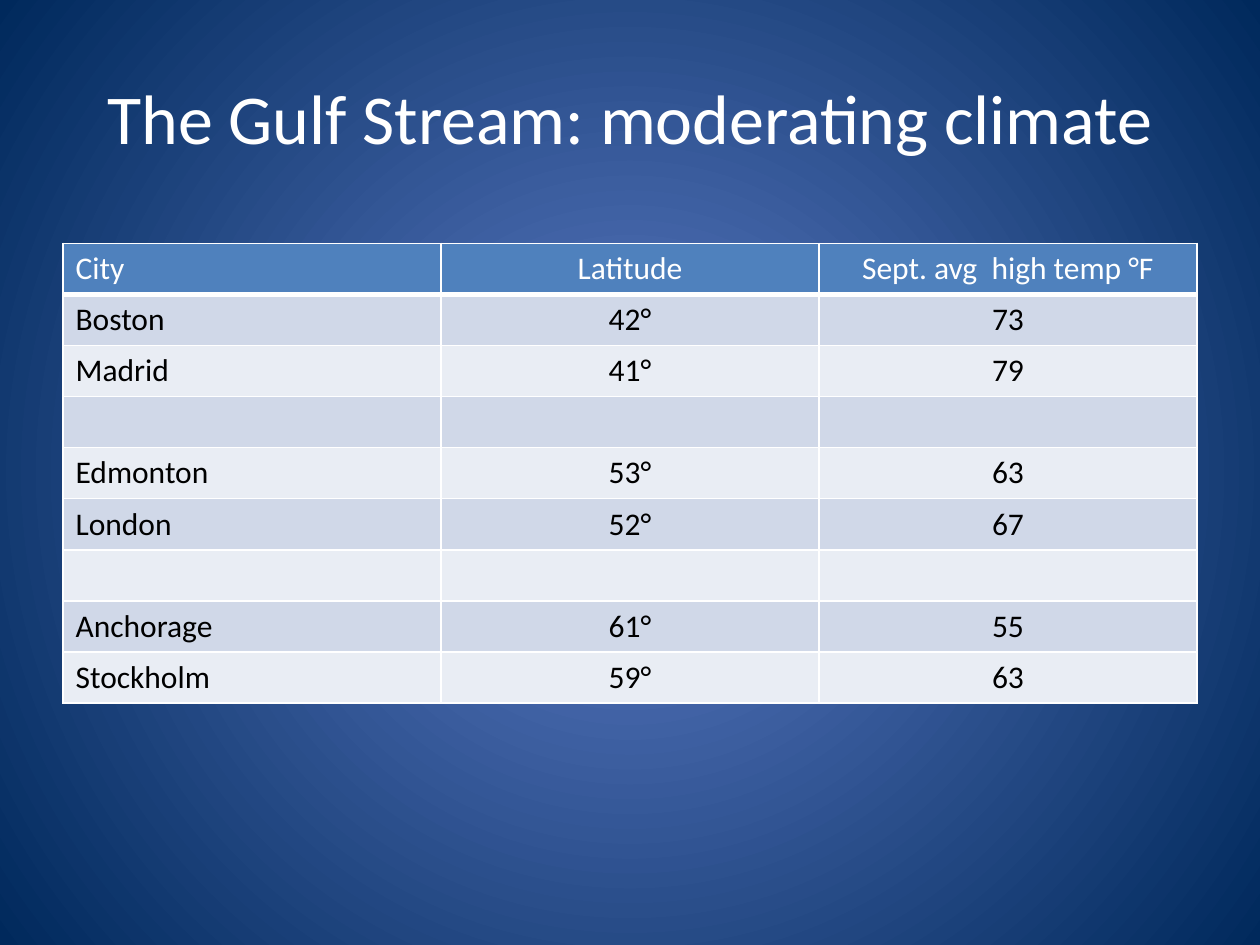
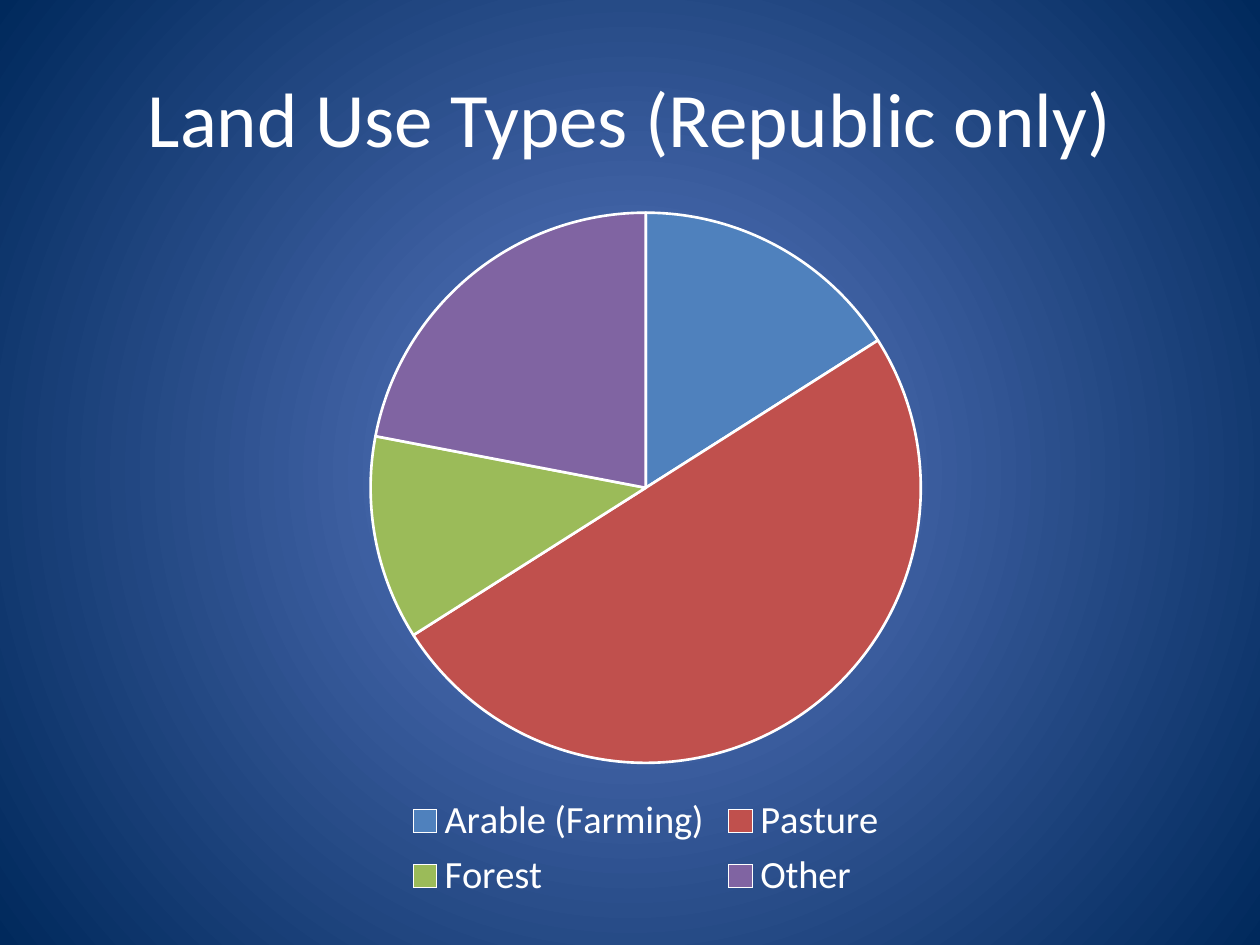
from dataclasses import dataclass

from lxml import etree
from pptx import Presentation
from pptx.chart.data import CategoryChartData
from pptx.dml.color import RGBColor
from pptx.enum.chart import XL_CHART_TYPE, XL_LEGEND_POSITION
from pptx.enum.text import MSO_ANCHOR, PP_ALIGN
from pptx.oxml import parse_xml
from pptx.oxml.ns import nsdecls, qn
from pptx.util import Pt

PIE = XL_CHART_TYPE.PIE
BOTTOM = XL_LEGEND_POSITION.BOTTOM
MIDDLE = MSO_ANCHOR.MIDDLE
LEFT, CENTER = PP_ALIGN.LEFT, PP_ALIGN.CENTER

# Content
CLIMATE_TITLE = "The Gulf Stream: moderating climate"
CLIMATE_ROWS = [
    ("City", "Latitude", "Sept. avg  high temp °F"),
    ("Boston", "42°", "73"),
    ("Madrid", "41°", "79"),
    ("", "", ""),
    ("Edmonton", "53°", "63"),
    ("London", "52°", "67"),
    ("", "", ""),
    ("Anchorage", "61°", "55"),
    ("Stockholm", "59°", "63"),
]
LAND_TITLE = "Land Use Types (Republic only)"
LAND_USE = {"Arable (Farming)": 16, "Pasture": 50, "Forest": 12, "Other": 22}


@dataclass(frozen=True)
class Theme:
    font: str = "Calibri"
    white: str = "FFFFFF"
    black: str = "000000"
    glow: str = "5E7CC5"
    edge: str = "00295C"
    header: str = "4F81BD"
    bands: tuple = ("D0D8E8", "E9EDF4")
    slices: tuple = ("4F81BD", "C0504D", "9BBB59", "8064A2")
    table_size: int = 18
    legend_size: int = 22
    chart_size: int = 10


THEME = Theme()

# Layout, in points
SLIDE_W, SLIDE_H = 720, 540
MARGIN = 36
BODY_W = SLIDE_W - 2 * MARGIN
TITLE_TOP, TITLE_H = 21.6, 90
TABLE_TOP, ROW_H = 139, 29.2
CHART_BOX = (90, 111.6, 558, 406.8)


def rgb(value):
    return RGBColor.from_string(value)


def style_font(font, size, color):
    font.name = THEME.font
    font.size = Pt(size)
    font.color.rgb = rgb(color)


def set_background(master):
    """Radial gradient shared by every slide."""
    fill = master.background.fill
    fill.gradient()
    for stop, color, position in zip(fill.gradient_stops, (THEME.glow, THEME.edge), (0, 1)):
        stop.color.rgb = rgb(color)
        stop.position = position
    lin = master.element.find(".//" + qn("a:lin"))
    lin.getparent().replace(lin, parse_xml(
        f'<a:path {nsdecls("a")} path="circle">'
        '<a:fillToRect l="50000" t="50000" r="50000" b="50000"/></a:path>'))


def add_titled_slide(prs, title, size):
    s = prs.slides.add_slide(prs.slide_layouts[5])
    sp = s.shapes.title
    sp.left, sp.top, sp.width, sp.height = map(Pt, (MARGIN, TITLE_TOP, BODY_W, TITLE_H))
    tf = sp.text_frame
    tf.text = title
    tf.vertical_anchor = MIDDLE
    p = tf.paragraphs[0]
    p.alignment = CENTER
    style_font(p.runs[0].font, size, THEME.white)
    return s


def set_borders(cell, bottom):
    tc_pr = cell.fill and cell._tc.get_or_add_tcPr()
    for i, (side, width) in enumerate(zip("LRTB", (1, 1, 1, bottom))):
        ln = etree.Element(qn(f"a:ln{side}"), w=str(Pt(width)))
        solid = etree.SubElement(ln, qn("a:solidFill"))
        etree.SubElement(solid, qn("a:srgbClr"), val=THEME.white)
        tc_pr.insert(i, ln)


def add_climate_table(s):
    n_rows, n_cols = len(CLIMATE_ROWS), len(CLIMATE_ROWS[0])
    table = s.shapes.add_table(n_rows, n_cols, Pt(MARGIN), Pt(TABLE_TOP),
                               Pt(BODY_W), Pt(n_rows * ROW_H)).table
    table.first_row = table.horz_banding = False
    for i, values in enumerate(CLIMATE_ROWS):
        table.rows[i].height = Pt(ROW_H)
        is_header = i == 0
        fill = THEME.header if is_header else THEME.bands[(i - 1) % 2]
        color = THEME.white if is_header else THEME.black
        for j, value in enumerate(values):
            cell = table.cell(i, j)
            cell.fill.solid()
            cell.fill.fore_color.rgb = rgb(fill)
            set_borders(cell, bottom=3 if is_header else 1)
            cell.text_frame.text = value
            p = cell.text_frame.paragraphs[0]
            p.alignment = CENTER if j else LEFT
            for r in p.runs:
                style_font(r.font, THEME.table_size, color)


def add_land_chart(s):
    data = CategoryChartData()
    data.categories = list(LAND_USE)
    data.add_series("Series 1", list(LAND_USE.values()))
    chart = s.shapes.add_chart(PIE, *map(Pt, CHART_BOX), data).chart
    style_font(chart.font, THEME.chart_size, THEME.white)
    chart.has_title = False
    chart.has_legend = True
    chart.legend.position = BOTTOM
    chart.legend.include_in_layout = False
    style_font(chart.legend.font, THEME.legend_size, THEME.white)
    plot = chart.plots[0]
    plot.vary_by_categories = True
    for i, color in enumerate(THEME.slices):
        fmt = plot.series[0].points[i].format
        fmt.fill.solid()
        fmt.fill.fore_color.rgb = rgb(color)
        fmt.line.color.rgb = rgb(THEME.white)
        fmt.line.width = Pt(1.5)


def main():
    prs = Presentation()
    prs.slide_width, prs.slide_height = Pt(SLIDE_W), Pt(SLIDE_H)
    set_background(prs.slide_master)
    add_climate_table(add_titled_slide(prs, CLIMATE_TITLE, 40))
    add_land_chart(add_titled_slide(prs, LAND_TITLE, 44))
    prs.save("out.pptx")


if __name__ == "__main__":
    main()
